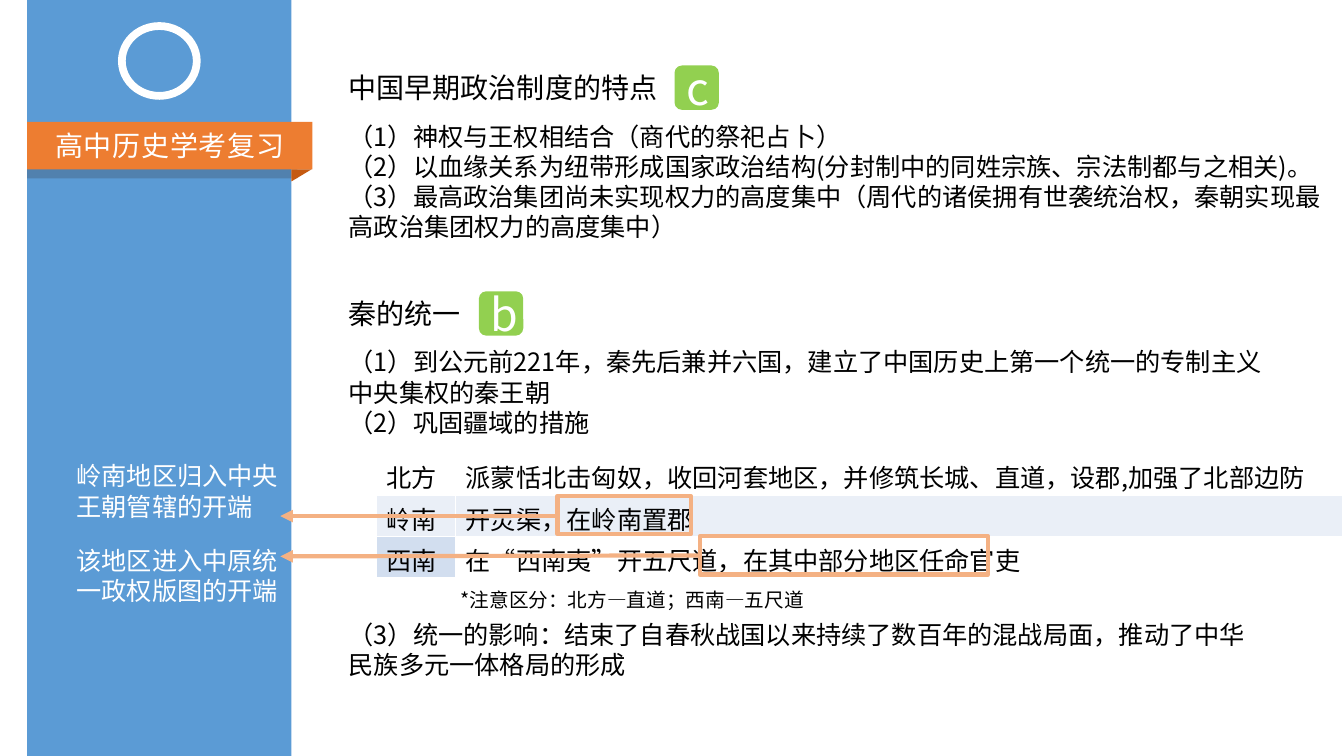
from lxml import etree
from pptx import Presentation
from pptx.dml.color import RGBColor
from pptx.enum.shapes import MSO_CONNECTOR, MSO_SHAPE
from pptx.enum.text import MSO_ANCHOR, PP_ALIGN
from pptx.oxml.ns import qn
from pptx.util import Pt

PX = 9144  # 100 px to the inch
FONT = "Noto Sans CJK SC"

RECT = MSO_SHAPE.RECTANGLE
ROUND = MSO_SHAPE.ROUNDED_RECTANGLE
WEDGE = MSO_SHAPE.RIGHT_TRIANGLE
RING = MSO_SHAPE.DONUT
LINE = MSO_CONNECTOR.STRAIGHT
LEFT, CENTER = PP_ALIGN.LEFT, PP_ALIGN.CENTER
MIDDLE = MSO_ANCHOR.MIDDLE

WHITE = RGBColor(0xFF, 0xFF, 0xFF)
BLACK = RGBColor(0, 0, 0)
BLUE = RGBColor(0x5B, 0x9B, 0xD5)
SHADE = RGBColor(0x32, 0x32, 0x32)
ORANGE = RGBColor(0xED, 0x7D, 0x31)
RUST = RGBColor(0xC5, 0x5A, 0x11)
GREEN = RGBColor(0x92, 0xD0, 0x50)
PEACH = RGBColor(0xF4, 0xB1, 0x83)
PALE = RGBColor(0xEA, 0xEF, 0xF7)
MIST = RGBColor(0xD2, 0xDE, 0xEF)

TRAITS = [
    "（1）神权与王权相结合（商代的祭祀占卜）",
    "（2）以血缘关系为纽带形成国家政治结构(分封制中的同姓宗族、宗法制都与之相关)。",
    "（3）最高政治集团尚未实现权力的高度集中（周代的诸侯拥有世袭统治权，秦朝实现最高政治集团权力的高度集中）",
]
UNITY = [
    "（1）到公元前221年，秦先后兼并六国，建立了中国历史上第一个统一的专制主义中央集权的秦王朝",
    "（2）巩固疆域的措施",
    "（3）统一的影响：结束了自春秋战国以来持续了数百年的混战局面，推动了中华民族多元一体格局的形成",
]
# Region, measures, and the fill of each cell
REGIONS = [
    ("北方", "派蒙恬北击匈奴，收回河套地区，并修筑长城、直道，设郡,加强了北部边防", WHITE, WHITE),
    ("岭南", "开灵渠，在岭南置郡", PALE, PALE),
    ("西南", "在“西南夷”开五尺道，在其中部分地区任命官吏", MIST, WHITE),
]


def emu(*nums):
    return [n * PX for n in nums]


def write(frame, texts, size, color, align=LEFT, spc=0):
    for i, text in enumerate(texts):
        para = frame.add_paragraph() if i else frame.paragraphs[0]
        para.text = text
        para.alignment = align
        font = para.font
        font.size, font.name = Pt(size), FONT
        font.color.rgb = color
        props = para._p.pPr.find(qn("a:defRPr"))
        etree.SubElement(props, qn("a:ea"), typeface=FONT)
        if spc:
            props.set("spc", str(spc))


def add_text(slide, box, texts, size, color=BLACK, wrap=True):
    frame = slide.shapes.add_textbox(*emu(*box)).text_frame
    frame.word_wrap = wrap
    write(frame, texts, size, color)
    return frame


def add_block(slide, kind, box, fill):
    shape = slide.shapes.add_shape(kind, *emu(*box))
    shape.shadow.inherit = False
    shape.fill.solid()
    shape.fill.fore_color.rgb = fill
    shape.line.fill.background()
    return shape


def add_label(shape, text, size, spc=0):
    frame = shape.text_frame
    frame.vertical_anchor = MIDDLE
    write(frame, [text], size, WHITE, CENTER, spc)


def add_head(slide, left, top, width, text, grade):
    add_text(slide, (left, top, width, 44), [text], 20, wrap=False)
    badge = add_block(slide, ROUND, (left + width + 4, top, 44, 44), GREEN)
    add_label(badge, grade, 32)


def add_grid(slide):
    left, top, wide, high = emu(373, 450, 959, 123)
    frame = slide.shapes.add_table(len(REGIONS), 2, left, top, wide, high)
    table = frame.table
    table.first_row = table.horz_banding = False
    for col, width in zip(table.columns, emu(79, 880)):
        col.width = width
    for r, (name, deed, *fills) in enumerate(REGIONS):
        for c, text in enumerate((name, deed)):
            cell = table.cell(r, c)
            write(cell.text_frame, [text], 18, BLACK)
            # White borders go before the fill
            props = cell._tc.get_or_add_tcPr()
            for side in ("lnL", "lnR", "lnT", "lnB"):
                edge = etree.SubElement(props, qn("a:" + side), w=str(Pt(1)))
                paint = etree.SubElement(edge, qn("a:solidFill"))
                etree.SubElement(paint, qn("a:srgbClr"), val=str(WHITE))
            cell.fill.solid()
            cell.fill.fore_color.rgb = fills[c]


def add_note(slide, box, start, end, top, text):
    # Frame around the key words
    frame = slide.shapes.add_shape(RECT, *emu(*box))
    frame.shadow.inherit = False
    frame.fill.background()
    # Arrow to the sidebar
    arrow = slide.shapes.add_connector(LINE, *emu(box[0], start, 278, end))
    for item in (frame, arrow):
        item.line.color.rgb = PEACH
        item.line.width = Pt(3)
    props = arrow._element.spPr
    etree.SubElement(props.find(qn("a:ln")), qn("a:tailEnd"), type="triangle")
    etree.SubElement(props, qn("a:effectLst"))
    add_text(slide, (66, top, 233, 71), [text], 18, WHITE)


def add_side(slide):
    add_block(slide, RECT, (27, 0, 262, 750), BLUE)
    shade = add_block(slide, RECT, (27, 130, 268, 47), SHADE)
    tint = shade._element.spPr.find(".//" + qn("a:srgbClr"))
    etree.SubElement(tint, qn("a:alpha"), val="24000")
    ring = add_block(slide, RING, (117, 22, 82, 77), WHITE)
    ring.adjustments[0] = 0.1
    band = add_block(slide, RECT, (27, 121, 283, 47), ORANGE)
    add_label(band, "高中历史学考复习", 20, 50)
    fold = add_block(slide, WEDGE, (293, 164, 12, 20), RUST)
    fold.rotation = 90


def main():
    deck = Presentation()
    deck.slide_width, deck.slide_height = emu(1333, 750)
    slide = deck.slides.add_slide(deck.slide_layouts[6])

    # Sidebar with ribbon
    add_side(slide)

    # Early political system
    add_head(slide, 336, 65, 329, "中国早期政治制度的特点", "c")
    add_text(slide, (336, 115, 995, 131), TRAITS, 18)

    # Unification, with room for the table
    add_head(slide, 336, 289, 135, "秦的统一", "b")
    body = add_text(slide, (336, 339, 926, 343), UNITY, 18)
    body.paragraphs[-1].space_before = Pt(130)
    add_grid(slide)
    add_text(slide, (447, 578, 488, 34), ["*注意区分：北方—直道；西南—五尺道"], 14)

    # Side notes
    add_note(slide, (553, 492, 132, 38), 512, 512, 452, "岭南地区归入中央王朝管辖的开端")
    add_note(slide, (694, 532, 286, 38), 551, 552, 536, "该地区进入中原统一政权版图的开端")

    deck.save("out.pptx")


if __name__ == "__main__":
    main()
